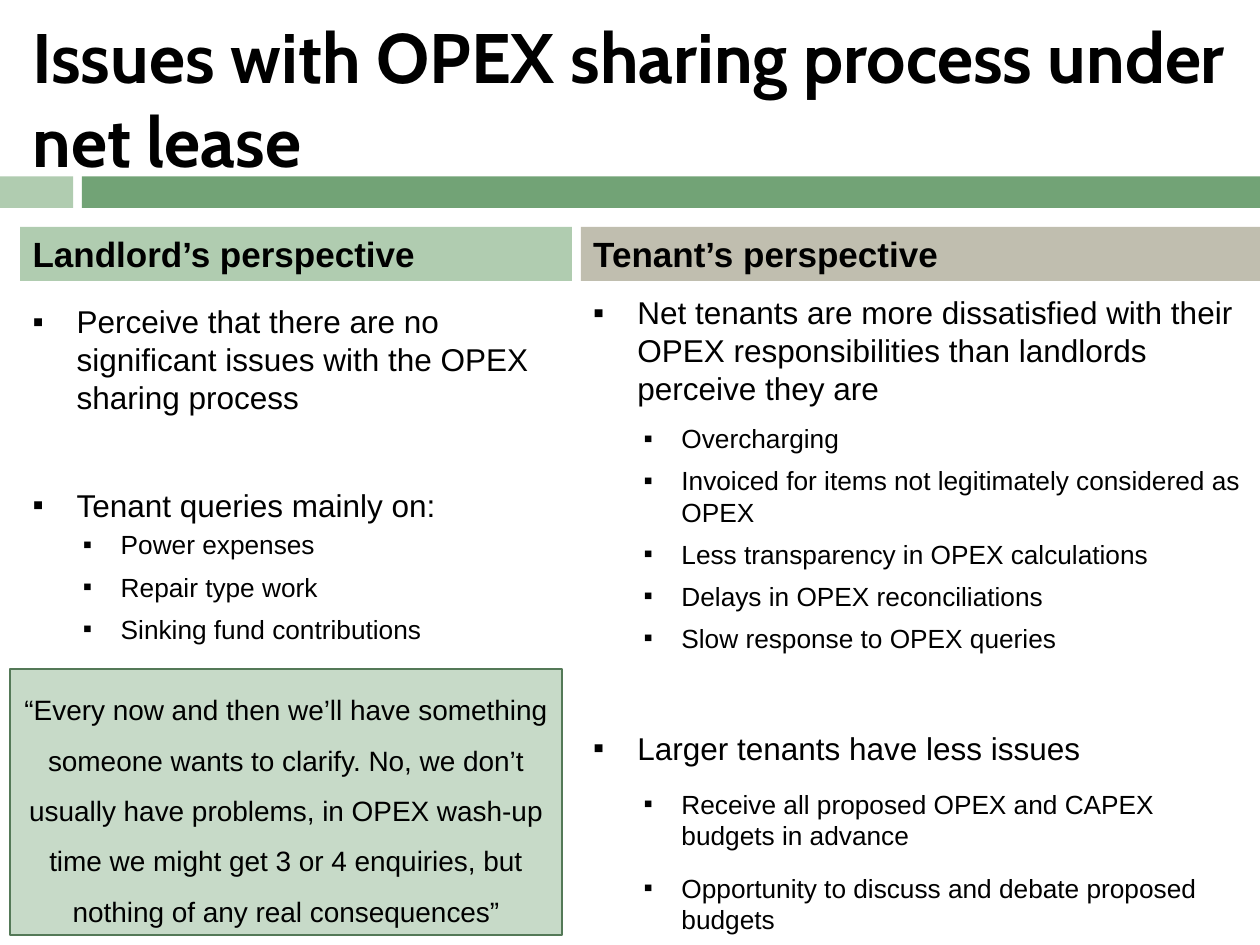
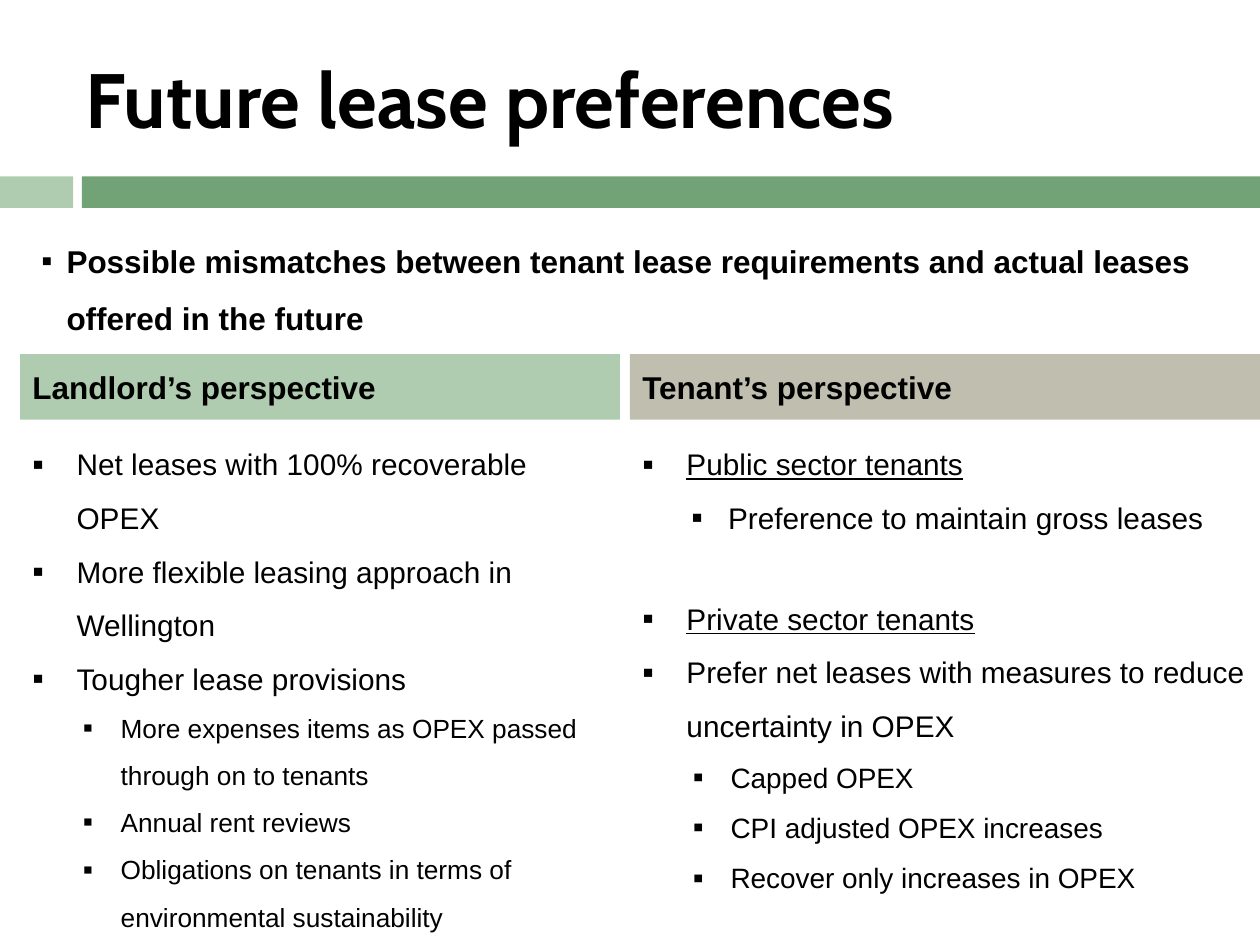
from dataclasses import dataclass

from lxml.etree import SubElement
from pptx import Presentation
from pptx.dml.color import RGBColor
from pptx.enum.shapes import MSO_SHAPE
from pptx.enum.text import MSO_ANCHOR, PP_ALIGN
from pptx.oxml.ns import qn
from pptx.util import Pt

SCALE = 9144
WIDE, HIGH = 1000, 750


@dataclass(frozen=True)
class Theme:
    ink: str = "000000"
    green: str = "72A376"
    light: str = "B0CCB0"
    pale: str = "C7DAC8"
    stone: str = "C0BEAF"
    edge: str = "547957"
    head: str = "Cabin"
    body: str = "Arial"
    large: int = 44
    title: int = 40
    label: int = 20
    main: int = 18
    item: int = 17
    note: int = 16
    small: int = 15


T = Theme()
MAIN = dict(size=T.main, left=35, hang=35, before=6, after=6)
SUB = dict(size=T.small, left=70, hang=30, before=3, after=3)
LOOSE = SUB | dict(before=6, after=6)
ITEM = dict(size=T.item, left=35, hang=35, space=1.5, mark=110)
POINT = ITEM | dict(size=T.small, left=70, hang=30)
MEASURE = POINT | dict(size=T.note)


def px(count):
    return round(count * SCALE)


def rgb(code):
    return RGBColor.from_string(code)


def put(target, values):
    for name, value in values.items():
        setattr(target, name, value)


def bullet(para, left, hang, mark):
    props = para._p.get_or_add_pPr()
    props.set("marL", str(px(left)))
    props.set("indent", str(-px(hang)))
    SubElement(props, qn("a:buSzPct"), val=str(mark * 1000))
    SubElement(props, qn("a:buFont"), typeface=T.body)
    SubElement(props, qn("a:buChar"), char="▪")


def write(frame, rows, anchor=MSO_ANCHOR.TOP):
    put(frame, dict(word_wrap=True, vertical_anchor=anchor))
    for index, (text, style) in enumerate(rows):
        para = frame.add_paragraph() if index else frame.paragraphs[0]
        put(para, dict(
            alignment=style.get("align", PP_ALIGN.LEFT),
            line_spacing=style.get("space", 1.0),
            space_before=Pt(style.get("before", 0)),
            space_after=Pt(style.get("after", 0)),
        ))
        if "left" in style:
            bullet(para, style["left"], style["hang"], style.get("mark", 100))
        run = para.add_run()
        run.text = text
        put(run.font, dict(
            name=style.get("face", T.body),
            size=Pt(style["size"]),
            bold=style.get("bold", False),
            underline=style.get("under", False),
        ))
        run.font.color.rgb = rgb(T.ink)


def label(slide, box, rows, anchor=MSO_ANCHOR.TOP):
    shape = slide.shapes.add_textbox(*map(px, box))
    write(shape.text_frame, rows, anchor)


def panel(slide, box, fill, edge=None):
    shape = slide.shapes.add_shape(MSO_SHAPE.RECTANGLE, *map(px, box))
    shape.shadow.inherit = False
    shape.fill.solid()
    shape.fill.fore_color.rgb = rgb(fill)
    if edge:
        shape.line.color.rgb = rgb(edge)
        shape.line.width = Pt(1.5)
    else:
        shape.line.fill.background()
    return shape


def frame(deck, text, box, size):
    slide = deck.slides.add_slide(deck.slide_layouts[6])
    start, top, high = 65, 140, 25
    panel(slide, (0, top, 58, high), T.light)
    panel(slide, (start, top, WIDE - start, high), T.green)
    style = dict(size=size, face=T.head, bold=True)
    label(slide, box, [(text, style)], MSO_ANCHOR.MIDDLE)
    return slide


def column(slide, box, name, fill, size, deep, gap, rows):
    left, top, width, high = box
    head = panel(slide, (left, top, width, deep), fill)
    style = dict(size=size, bold=True)
    write(head.text_frame, [(name, style)], MSO_ANCHOR.MIDDLE)
    skip = deep + gap
    label(slide, (left, top + skip, width, high - skip), rows)


def pair(slide, top, split, wide, size, deep, gaps, lists):
    sides = (
        (16, wide, "Landlord’s perspective", T.light),
        (split, WIDE - split, "Tenant’s perspective", T.stone),
    )
    for (left, width, name, fill), gap, rows in zip(sides, gaps, lists):
        box = (left, top, width, HIGH - top)
        column(slide, box, name, fill, size, deep, gap, rows)


def quote(slide, box, text):
    shape = panel(slide, box, T.pale, T.edge)
    style = dict(size=T.note, space=1.5, align=PP_ALIGN.CENTER)
    write(shape.text_frame, [(text, style)], MSO_ANCHOR.MIDDLE)


def issues(deck):
    slide = frame(deck, "Issues with OPEX sharing process under net lease",
                  (16, 30, 977, 95), T.title)
    owner = [
        ("Perceive that there are no significant issues with the OPEX "
         "sharing process", MAIN),
        ("Tenant queries mainly on:", MAIN | dict(before=34, after=0)),
        ("Power expenses", SUB),
        ("Repair type work", SUB),
        ("Sinking fund contributions", SUB),
    ]
    tenant = [
        ("Net tenants are more dissatisfied with their OPEX "
         "responsibilities than landlords perceive they are", MAIN),
        ("Overcharging", SUB),
        ("Invoiced for items not legitimately considered as OPEX", SUB),
        ("Less transparency in OPEX calculations", SUB),
        ("Delays in OPEX reconciliations", SUB),
        ("Slow response to OPEX queries", SUB),
        ("Larger tenants have less issues", MAIN | dict(before=40)),
        ("Receive all proposed OPEX and CAPEX budgets in advance", LOOSE),
        ("Opportunity to discuss and debate proposed budgets", LOOSE),
    ]
    pair(slide, 180, 461, 438, T.label, 43, (12, 5), (owner, tenant))
    quote(slide, (8, 531, 438, 211),
          "“Every now and then we’ll have something someone wants to "
          "clarify. No, we don’t usually have problems, in OPEX wash-up "
          "time we might get 3 or 4 enquiries, but nothing of any real "
          "consequences”")


def future(deck):
    slide = frame(deck, "Future lease preferences",
                  (58, 30, 892, 95), T.large)
    lead = dict(size=T.main, bold=True, left=20, hang=20, space=1.5)
    label(slide, (23, 172, 977, 95), [
        ("Possible mismatches between tenant lease requirements and "
         "actual leases offered in the future", lead),
    ])
    owner = [
        ("Net leases with 100% recoverable OPEX", ITEM),
        ("More flexible leasing approach in Wellington", ITEM),
        ("Tougher lease provisions", ITEM),
        ("More expenses items as OPEX passed through on to tenants", POINT),
        ("Annual rent reviews", POINT),
        ("Obligations on tenants in terms of environmental "
         "sustainability", POINT),
    ]
    tenant = [
        ("Public sector tenants", ITEM | dict(under=True)),
        ("Preference to maintain gross leases",
         ITEM | dict(left=68, hang=29)),
        ("Private sector tenants", ITEM | dict(under=True, before=27)),
        ("Prefer net leases with measures to reduce uncertainty in "
         "OPEX", ITEM),
        ("Capped OPEX", MEASURE),
        ("CPI adjusted OPEX increases", MEASURE),
        ("Recover only increases in OPEX", MEASURE),
    ]
    pair(slide, 281, 500, 476, T.main, 52, (2, 2), (owner, tenant))


def main():
    deck = Presentation()
    put(deck, dict(slide_width=px(WIDE), slide_height=px(HIGH)))
    issues(deck)
    future(deck)
    deck.save("out.pptx")


if __name__ == "__main__":
    main()
